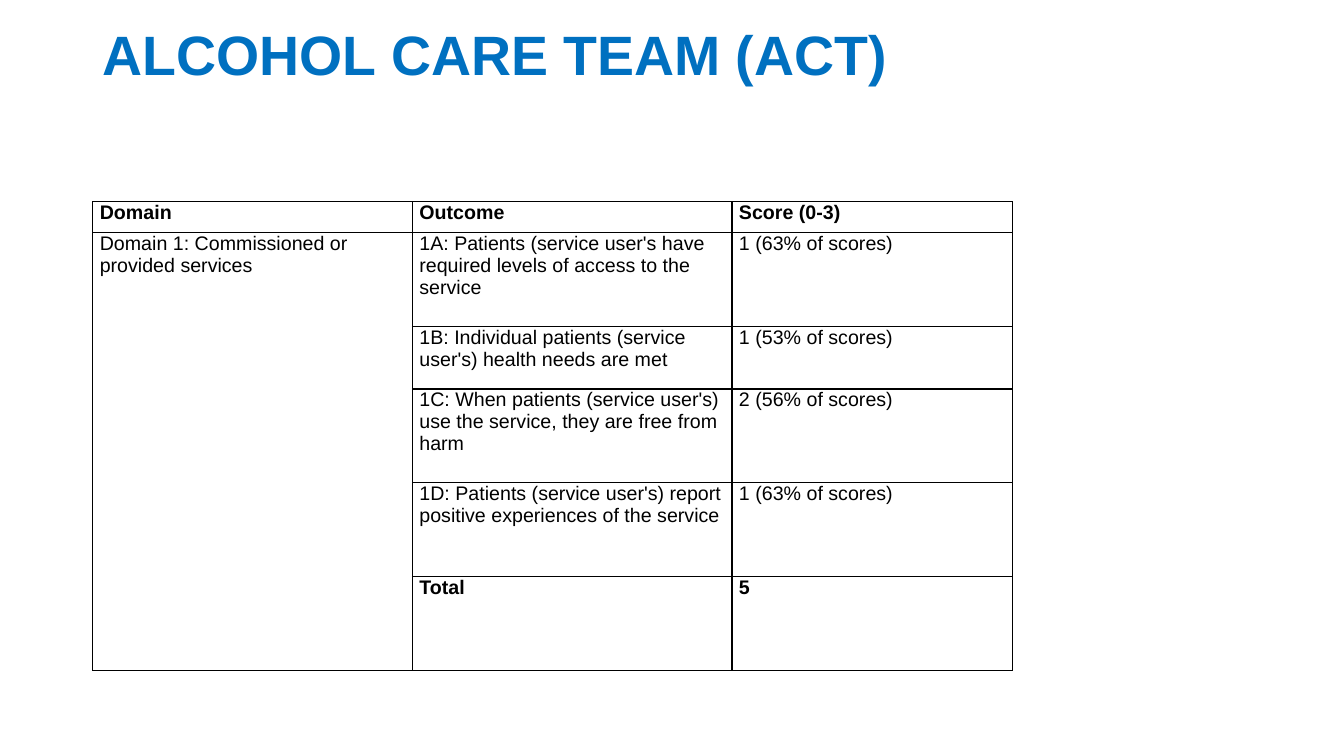
from lxml import etree
from pptx import Presentation, util as u
from pptx.dml.color import RGBColor
from pptx.enum import text
from pptx.oxml.ns import qn

WIDTH, HEIGHT = 13.33, 7.5
LEFT = 0.92
COLUMN_WIDTHS = [3.17, 3.17, 2.78]
ROW_HEIGHTS = [0.31, 0.93, 0.62, 0.93, 0.93, 0.93]
SCORES = [
    ["Domain", "Outcome", "Score (0-3)"],
    ["Domain 1: Commissioned or provided services",
     "1A: Patients (service user's have required levels of access to the service",
     "1 (63% of scores)"],
    ["", "1B: Individual patients (service user's) health needs are met",
     "1 (53% of scores)"],
    ["", "1C: When patients (service user's) use the service, they are free from harm",
     "2 (56% of scores)"],
    ["", "1D: Patients (service user's) report positive experiences of the service",
     "1 (63% of scores)"],
    ["", "Total", "5"],
]


def color(value):
    """Turn a hex string into a colour."""
    return RGBColor.from_string(value)


def style(paragraph, size, ink, bold):
    """Set the font of every run in a paragraph."""
    for run in paragraph.runs:
        run.font.name = "Arial"
        run.font.size = u.Pt(size)
        run.font.bold = bold
        run.font.color.rgb = color(ink)


def add_title(slide, wording):
    """Place the heading across the top of the slide."""
    heading = slide.shapes.add_textbox(
        u.Inches(LEFT), u.Inches(0.27), u.Inches(11.5), u.Inches(0.57))
    frame = heading.text_frame
    frame.word_wrap = True
    frame.vertical_anchor = text.MSO_ANCHOR.TOP
    frame.margin_top = frame.margin_bottom = 0
    frame.text = wording
    frame.paragraphs[0].line_spacing = 0.9
    style(frame.paragraphs[0], 39.6, "0070C0", True)


def add_borders(cell, ink="000000", width=1):
    """Draw a solid line on all four sides of a cell."""
    properties = cell._tc.get_or_add_tcPr()
    for position, side in enumerate(("lnL", "lnR", "lnT", "lnB")):
        line = etree.Element(qn(f"a:{side}"), w=str(u.Pt(width)))
        fill = etree.SubElement(line, qn("a:solidFill"))
        etree.SubElement(fill, qn("a:srgbClr"), val=ink)
        properties.insert(position, line)


def fill_cell(cell, wording, bold):
    """Write a cell with narrow margins and a plain ground."""
    cell.margin_left = cell.margin_right = u.Inches(0.07)
    cell.margin_top = cell.margin_bottom = 0
    cell.fill.background()
    cell.text = wording
    style(cell.text_frame.paragraphs[0], 14, "000000", bold)
    add_borders(cell)


def add_scores(slide):
    """Build the table of outcomes and scores."""
    scores = slide.shapes.add_table(
        len(ROW_HEIGHTS), len(COLUMN_WIDTHS), u.Inches(LEFT), u.Inches(2),
        u.Inches(sum(COLUMN_WIDTHS)), u.Inches(sum(ROW_HEIGHTS))).table
    scores.horz_banding = False
    for column, width in zip(scores.columns, COLUMN_WIDTHS):
        column.width = u.Inches(width)
    for row, height in zip(scores.rows, ROW_HEIGHTS):
        row.height = u.Inches(height)
    last = len(SCORES) - 1
    for r, entries in enumerate(SCORES):
        for c, wording in enumerate(entries):
            fill_cell(scores.cell(r, c), wording, r in (0, last))
    scores.cell(1, 0).merge(scores.cell(last, 0))


def main():
    """Build and save the slide."""
    deck = Presentation()
    deck.slide_width, deck.slide_height = u.Inches(WIDTH), u.Inches(HEIGHT)
    slide = deck.slides.add_slide(deck.slide_layouts[6])
    add_title(slide, "ALCOHOL CARE TEAM (ACT)")
    add_scores(slide)
    deck.save("out.pptx")


if __name__ == "__main__":
    main()
